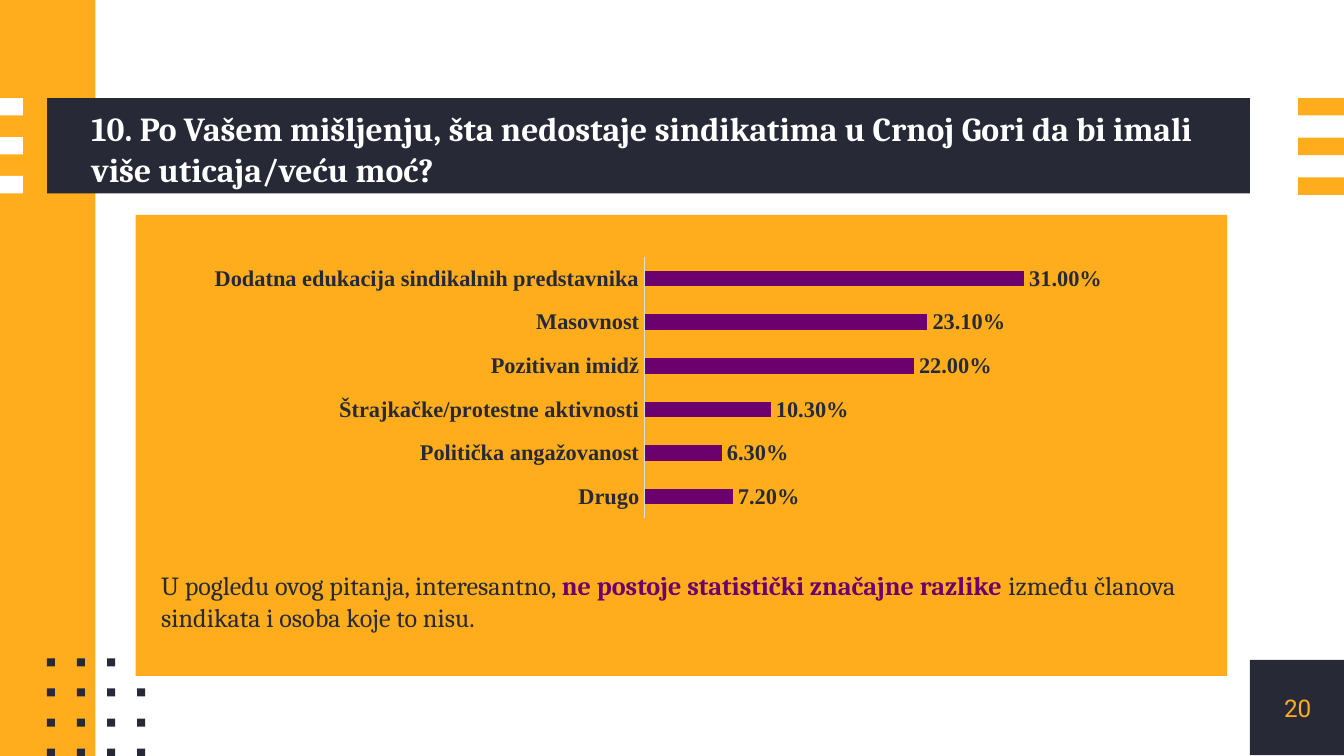
from lxml.etree import SubElement
from pptx import Presentation
from pptx.chart.data import CategoryChartData
from pptx.dml.color import RGBColor
from pptx.enum.chart import XL_CHART_TYPE, XL_LABEL_POSITION, XL_TICK_LABEL_POSITION, XL_TICK_MARK
from pptx.enum.shapes import MSO_SHAPE
from pptx.enum.text import MSO_ANCHOR, PP_ALIGN
from pptx.oxml.ns import qn
from pptx.util import Inches, Pt

COLORS = {"dark": "272A36", "orange": "FFAD1D", "white": "FFFFFF",
          "purple": "6C006C", "axis": "DBDDE5"}
CHART_FONT = {"name": "Times New Roman", "size": 12, "bold": True, "color": "dark"}
ANSWERS = {
    "Dodatna edukacija sindikalnih predstavnika": 0.31,
    "Masovnost": 0.231,
    "Pozitivan imidž": 0.22,
    "Štrajkačke/protestne aktivnosti": 0.103,
    "Politička angažovanost": 0.063,
    "Drugo": 0.072,
}


def color(name):
    return RGBColor.from_string(COLORS[name])


class SlideBuilder:
    def __init__(self, slide):
        self.slide = slide

    def format_font(self, font, style):
        for key, value in style.items():
            if key == "color":
                font.color.rgb = color(value)
            else:
                setattr(font, key, Pt(value) if key == "size" else value)

    def rectangle(self, left, top, width, height, fill):
        shape = self.slide.shapes.add_shape(
            MSO_SHAPE.RECTANGLE, Inches(left), Inches(top), Inches(width), Inches(height))
        shape.shadow.inherit = False
        shape.fill.solid()
        shape.fill.fore_color.rgb = color(fill)
        shape.line.fill.background()

    def text(self, left, top, width, height, runs, margins=(0, 0),
             anchor=MSO_ANCHOR.MIDDLE, align=PP_ALIGN.LEFT):
        box = self.slide.shapes.add_textbox(
            Inches(left), Inches(top), Inches(width), Inches(height))
        frame = box.text_frame
        horizontal, vertical = map(Inches, margins)
        settings = {"word_wrap": True, "vertical_anchor": anchor,
                    "margin_left": horizontal, "margin_right": horizontal,
                    "margin_top": vertical, "margin_bottom": vertical}
        for key, value in settings.items():
            setattr(frame, key, value)
        paragraph = frame.paragraphs[0]
        paragraph.alignment = align
        for content, style in runs:
            run = paragraph.add_run()
            run.text = content
            self.format_font(run.font, style)

    def bar_chart(self, left, top, width, height, answers, layout):
        data = CategoryChartData(number_format="0.00%")
        data.categories = list(answers)
        data.add_series("Series 1", list(answers.values()))
        chart = self.slide.shapes.add_chart(
            XL_CHART_TYPE.BAR_CLUSTERED, Inches(left), Inches(top),
            Inches(width), Inches(height), data).chart
        chart.has_legend = False
        chart.has_title = False
        self.format_font(chart.font, {**CHART_FONT, "size": 10, "bold": False})

        # Axes
        categories = chart.category_axis
        categories.reverse_order = True
        categories.major_tick_mark = XL_TICK_MARK.NONE
        categories.tick_label_position = XL_TICK_LABEL_POSITION.NEXT_TO_AXIS
        categories.format.line.color.rgb = color("axis")
        categories.format.line.width = Pt(0.75)
        self.format_font(categories.tick_labels.font, CHART_FONT)
        values = chart.value_axis
        values.minimum_scale, values.maximum_scale = 0, 0.35
        values.has_major_gridlines = False
        values.tick_labels.number_format = "0.00%"
        values.tick_labels.number_format_is_linked = False
        values.visible = False

        # Bars and their labels
        plot = chart.plots[0]
        plot.gap_width = 182
        plot.vary_by_categories = False
        series = plot.series[0]
        series.format.fill.solid()
        series.format.fill.fore_color.rgb = color("purple")
        labels = series.data_labels
        label_settings = {"show_value": True, "position": XL_LABEL_POSITION.OUTSIDE_END,
                          "number_format": "0.00%", "number_format_is_linked": False}
        for key, value in label_settings.items():
            setattr(labels, key, value)
        self.format_font(labels.font, CHART_FONT)

        # Fixed inner plot area
        plot_area = chart.element.find(".//" + qn("c:plotArea"))
        area_layout = plot_area.find(qn("c:layout"))
        if area_layout is None:
            area_layout = SubElement(plot_area, qn("c:layout"))
            plot_area.insert(0, area_layout)
        manual = SubElement(area_layout, qn("c:manualLayout"))
        for tag, value in {"layoutTarget": "inner", "xMode": "edge",
                           "yMode": "edge", **layout}.items():
            SubElement(manual, qn(f"c:{tag}")).set("val", str(value))


def main():
    presentation = Presentation()
    presentation.slide_width = Inches(10)
    presentation.slide_height = presentation.slide_width * 9 // 16
    builder = SlideBuilder(presentation.slides.add_slide(presentation.slide_layouts[6]))

    # Page number block, side band and title bar
    builder.rectangle(9.3, 4.91, 0.71, 0.71, "dark")
    builder.rectangle(0, 0, 0.71, 5.63, "orange")
    builder.rectangle(0.35, 0.73, 8.95, 0.71, "dark")

    # Stripes on both edges
    for row in range(3):
        builder.rectangle(0, 0.73 + 0.29 * row, 0.17, 0.13, "white")
        builder.rectangle(9.66, 0.73 + 0.59 * row / 2, 0.34, 0.13, "orange")

    # Dot grid
    for row in range(4):
        for column in range(4):
            builder.rectangle(0.35 + 0.67 * column / 3, 4.9 + 0.67 * row / 3,
                              0.06, 0.06, "dark")

    # Title and page number
    title_style = {"name": "Cambria", "size": 18, "bold": True, "color": "white"}
    builder.text(0.68, 0.75, 8.58, 0.71, [
        ("10. Po Vašem mišljenju, šta nedostaje sindikatima u Crnoj Gori "
         "da bi imali više uticaja/veću moć?", title_style)])
    builder.text(9.3, 4.91, 0.71, 0.71,
                 [("20", {"name": "Roboto", "size": 13, "color": "orange"})],
                 align=PP_ALIGN.CENTER)

    # Panel with chart and comment
    builder.rectangle(1.01, 1.6, 8.12, 3.43, "orange")
    builder.bar_chart(1.5, 1.87, 6.7, 2.03, ANSWERS,
                      {"x": 3.3 / 6.7, "y": 0.02, "w": 3.19 / 6.7, "h": 0.96})
    body = {"name": "Cambria", "size": 14, "color": "dark"}
    builder.text(1.1, 4.19, 8.12, 0.57, [
        ("U pogledu ovog pitanja, interesantno, ", body),
        ("ne postoje statistički značajne razlike ",
         {**body, "color": "purple", "bold": True}),
        ("između članova sindikata i osoba koje to nisu.", body),
    ], margins=(0.1, 0.05), anchor=MSO_ANCHOR.TOP)

    presentation.save("out.pptx")


if __name__ == "__main__":
    main()
